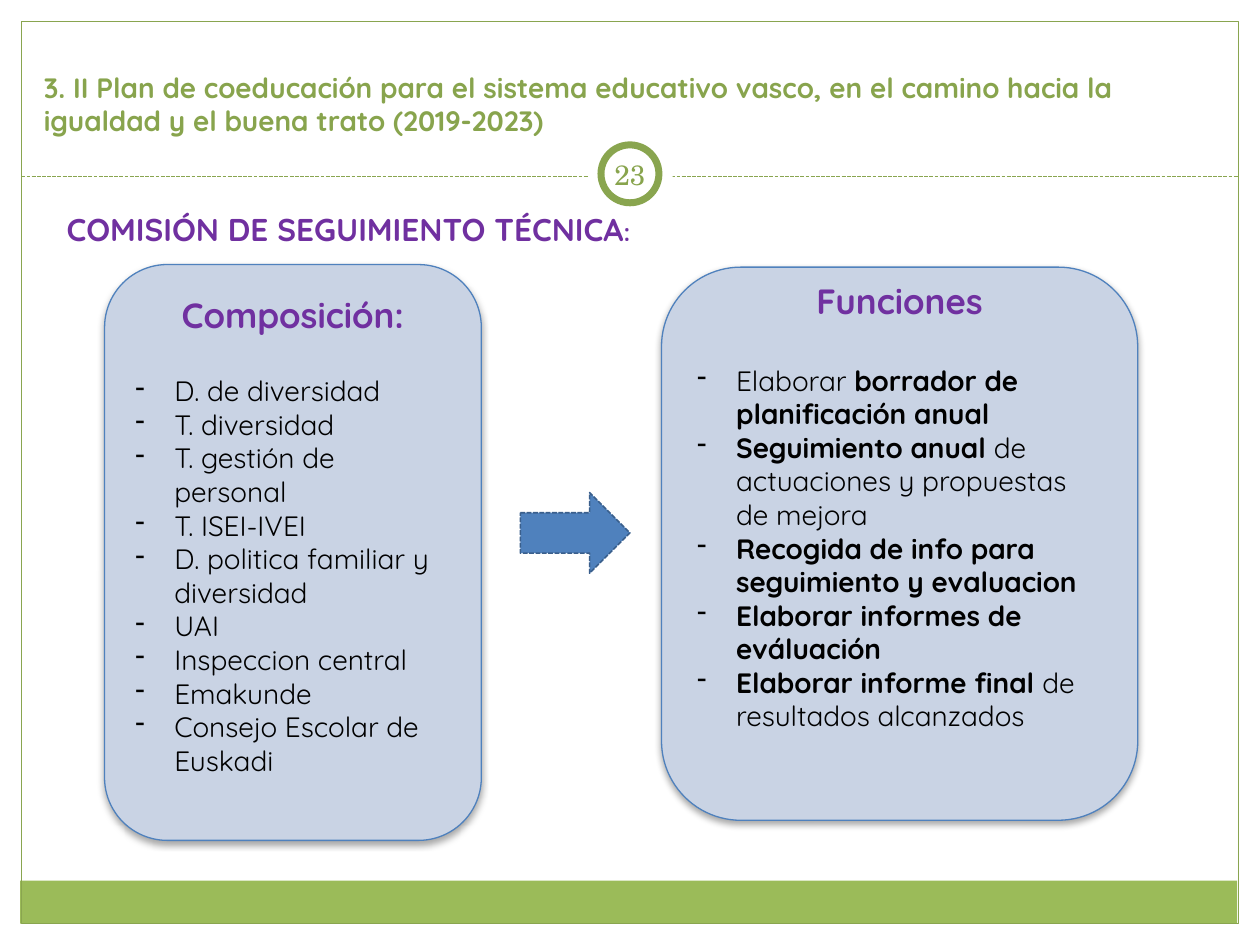
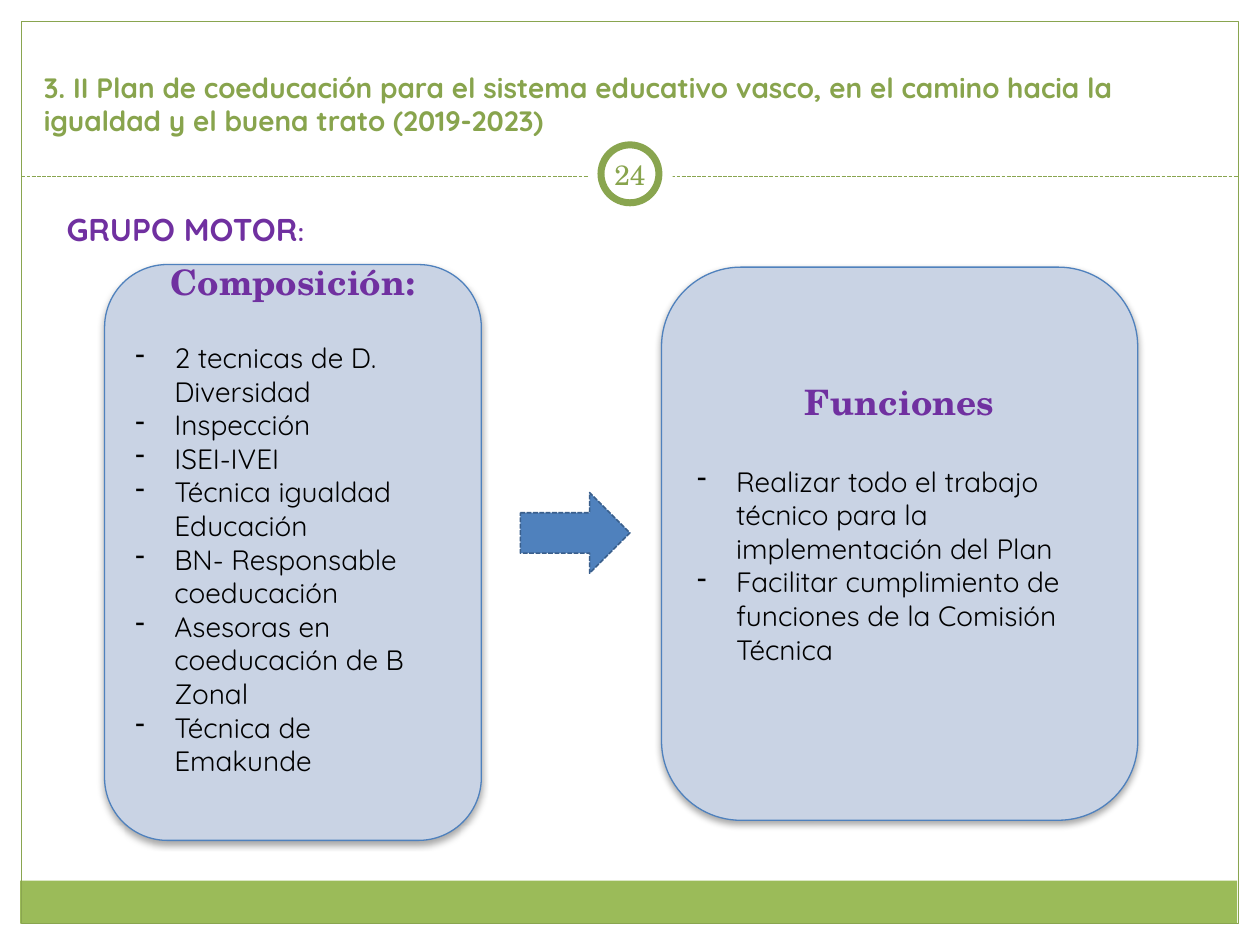
from dataclasses import dataclass

from lxml.etree import SubElement
from pptx import Presentation
from pptx.dml.color import RGBColor
from pptx.enum.dml import MSO_LINE
from pptx.enum.shapes import MSO_CONNECTOR, MSO_SHAPE
from pptx.enum.text import MSO_ANCHOR, PP_ALIGN
from pptx.oxml.ns import qn
from pptx.util import Inches, Pt

WHITE = RGBColor(0xFF, 0xFF, 0xFF)
BLACK = RGBColor(0, 0, 0)
BAND_GREEN = RGBColor(0x9B, 0xBB, 0x59)
LINE_GREEN = RGBColor(0x89, 0xA5, 0x4F)
TEXT_GREEN = RGBColor(0x88, 0xA4, 0x4D)
PURPLE = RGBColor(0x70, 0x30, 0xA0)
CARD_FILL = RGBColor(0xC9, 0xD3, 0xE4)
BLUE = RGBColor(0x4F, 0x81, 0xBD)
DARK_BLUE = RGBColor(0x3A, 0x5F, 0x8C)

SANS = "Quicksand"
SERIF = "TeX Gyre Schola"
TITLE = ("3. II Plan de coeducación para el sistema educativo vasco, "
         "en el camino hacia la igualdad y el buena trato (2019-2023)")

# Left, top, width, height of the two cards
COMPOSITION_BOX = (0.83, 2.1, 2.99, 4.57)
FUNCTIONS_BOX = (5.25, 2.12, 3.78, 4.39)


@dataclass
class Card:
    box: tuple[float, float, float, float]
    heading: str
    items: list[str]  # bold parts stand between asterisks
    gap: float  # points between heading and list
    lift: float  # inches kept free under the list


@dataclass
class Page:
    number: int
    subtitle: str
    heading_font: str
    cards: list[Card]


PAGES = [
    Page(23, "COMISIÓN DE SEGUIMIENTO TÉCNICA", SANS, [
        Card(COMPOSITION_BOX, "Composición:", [
            "D. de diversidad",
            "T. diversidad",
            "T. gestión de personal",
            "T. ISEI-IVEI",
            "D. politica familiar y diversidad",
            "UAI",
            "Inspeccion central",
            "Emakunde",
            "Consejo Escolar de Euskadi",
        ], 21.6, 0.27),
        Card(FUNCTIONS_BOX, "Funciones", [
            "Elaborar *borrador de planificación anual*",
            "*Seguimiento anual *de actuaciones y propuestas de mejora",
            "*Recogida de info para seguimiento y evaluacion*",
            "*Elaborar informes de eváluación*",
            "*Elaborar informe final *de resultados alcanzados",
        ], 24, 0.6),
    ]),
    Page(24, "GRUPO MOTOR", SERIF, [
        Card(COMPOSITION_BOX, "Composición:", [
            "2 tecnicas de D. Diversidad",
            "Inspección",
            "ISEI-IVEI",
            "Técnica igualdad Educación",
            "BN- Responsable coeducación",
            "Asesoras en coeducación de B Zonal",
            "Técnica de Emakunde",
        ], 21.6, 0.53),
        Card(FUNCTIONS_BOX, "Funciones", [
            "Realizar todo el trabajo técnico para la implementación del Plan",
            "Facilitar cumplimiento de funciones de la Comisión Técnica",
        ], 24, 0.33),
    ]),
]


def add_run(p, text: str, *, size: float, color: RGBColor, font: str = SANS,
            bold: bool = False) -> None:
    r = p.add_run()
    r.text = text
    r.font.name, r.font.size, r.font.bold = font, Pt(size), bold
    r.font.color.rgb = color


def add_box(slide, left: float, top: float, width: float, height: float,
            anchor=MSO_ANCHOR.TOP):
    """Add a wrapping text box and return its first paragraph."""
    sp = slide.shapes.add_textbox(Inches(left), Inches(top), Inches(width), Inches(height))
    tf = sp.text_frame
    tf.word_wrap = True
    tf.vertical_anchor = anchor
    return tf.paragraphs[0]


def add_preset(slide, kind, box, *, fill: RGBColor | None = None,
               line: RGBColor | None = None, weight: float = 0.75):
    sp = slide.shapes.add_shape(kind, *(Inches(v) for v in box))
    sp.shadow.inherit = False
    if fill is None:
        sp.fill.background()
    else:
        sp.fill.solid()
        sp.fill.fore_color.rgb = fill
    if line is None:
        sp.line.fill.background()
    else:
        sp.line.color.rgb = line
        sp.line.width = Pt(weight)
    return sp


def add_shadow(sp) -> None:
    effects = sp._element.spPr.find(qn("a:effectLst"))
    shadow = SubElement(effects, qn("a:outerShdw"), blurRad=str(Pt(4)), dist=str(Pt(2)),
                        dir="5400000", rotWithShape="0")
    color = SubElement(shadow, qn("a:srgbClr"), val=str(BLACK))
    SubElement(color, qn("a:alpha"), val="35000")


def set_dash_bullet(p) -> None:
    pPr = p._p.get_or_add_pPr()
    pPr.set("marL", str(Inches(0.31)))
    pPr.set("indent", str(-Inches(0.31)))
    SubElement(pPr, qn("a:buChar"), char="-")


def add_frame(slide, number: int) -> None:
    # Footer band, border and dashed rule
    add_preset(slide, MSO_SHAPE.RECTANGLE, (0.16, 6.99, 9.66, 0.34), fill=BAND_GREEN)
    add_preset(slide, MSO_SHAPE.RECTANGLE, (0.17, 0.17, 9.66, 7.16), line=LINE_GREEN)
    rule = slide.shapes.add_connector(MSO_CONNECTOR.STRAIGHT, Inches(0.17), Inches(1.4),
                                      Inches(9.83), Inches(1.4))
    rule.line.color.rgb = LINE_GREEN
    rule.line.width = Pt(0.75)
    rule.line.dash_style = MSO_LINE.SQUARE_DOT
    SubElement(rule._element.spPr, qn("a:effectLst"))

    # Number badge
    add_preset(slide, MSO_SHAPE.OVAL, (4.67, 1.05, 0.67, 0.67), fill=WHITE)
    add_preset(slide, MSO_SHAPE.OVAL, (4.77, 1.15, 0.46, 0.46), fill=WHITE,
               line=LINE_GREEN, weight=4)
    p = add_box(slide, 4.7, 1.14, 0.6, 0.48, MSO_ANCHOR.MIDDLE)
    p.alignment = PP_ALIGN.CENTER
    add_run(p, str(number), size=16, color=TEXT_GREEN, font=SERIF)

    # Title
    p = add_box(slide, 0.25, 0.4, 9, 0.74, MSO_ANCHOR.BOTTOM)
    add_run(p, TITLE, size=16, color=TEXT_GREEN, bold=True)


def add_card(slide, card: Card, heading_font: str) -> None:
    sp = add_preset(slide, MSO_SHAPE.ROUNDED_RECTANGLE, card.box, fill=CARD_FILL, line=BLUE)
    add_shadow(sp)
    tf = sp.text_frame
    tf.word_wrap = True
    tf.vertical_anchor = MSO_ANCHOR.MIDDLE
    tf.margin_bottom = Inches(0.05 + card.lift)

    p = tf.paragraphs[0]
    p.alignment = PP_ALIGN.CENTER
    p.space_after = Pt(card.gap)
    add_run(p, card.heading, size=20, color=PURPLE, font=heading_font, bold=True)
    for item in card.items:
        p = tf.add_paragraph()
        p.alignment = PP_ALIGN.LEFT
        set_dash_bullet(p)
        for i, part in enumerate(item.split("*")):
            if part:
                add_run(p, part, size=16, color=BLACK, bold=i % 2 == 1)


def add_page(prs, page: Page) -> None:
    slide = prs.slides.add_slide(prs.slide_layouts[6])
    add_frame(slide, page.number)
    p = add_box(slide, 0.43, 1.62, 9.14, 0.4)
    add_run(p, page.subtitle, size=18, color=PURPLE, bold=True)
    add_run(p, ":", size=14, color=PURPLE, bold=True)
    for card in page.cards:
        add_card(slide, card, page.heading_font)
    arrow = add_preset(slide, MSO_SHAPE.RIGHT_ARROW, (4.13, 3.91, 0.87, 0.64),
                       fill=BLUE, line=DARK_BLUE, weight=0.9)
    arrow.line.dash_style = MSO_LINE.SQUARE_DOT


def main() -> None:
    prs = Presentation()
    prs.slide_width, prs.slide_height = Inches(10), Inches(7.5)
    for page in PAGES:
        add_page(prs, page)
    prs.save("out.pptx")


if __name__ == "__main__":
    main()
